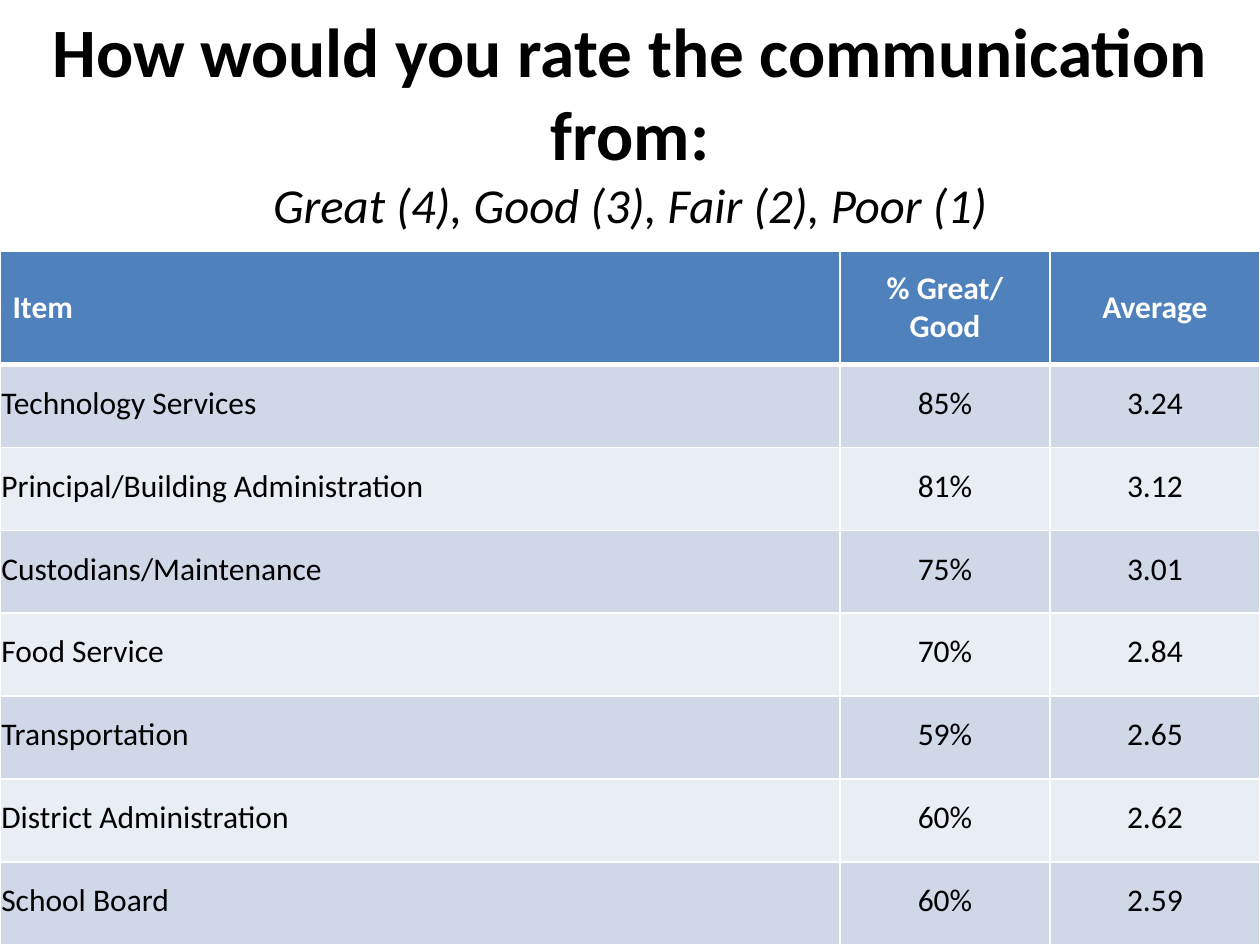
from lxml import etree
from pptx import Presentation
from pptx.dml.color import RGBColor
from pptx.enum import text
from pptx.oxml import ns
from pptx.util import Pt

QUESTION = "How would you rate the communication from:"
SCALE = "Great (4), Good (3), Fair (2), Poor (1)"
HEADER = ("Item", "% Great/ Good", "Average")
RATINGS = [
    ("Technology Services", "85%", "3.24"),
    ("Principal/Building Administration", "81%", "3.12"),
    ("Custodians/Maintenance", "75%", "3.01"),
    ("Food Service", "70%", "2.84"),
    ("Transportation", "59%", "2.65"),
    ("District Administration", "60%", "2.62"),
    ("School Board", "60%", "2.59"),
]

FONT = "Calibri"
BLACK = RGBColor(0x00, 0x00, 0x00)
WHITE = RGBColor(0xFF, 0xFF, 0xFF)
HEADER_BLUE = RGBColor(0x4F, 0x81, 0xBD)
BANDS = (RGBColor(0xD0, 0xD8, 0xE8), RGBColor(0xE9, 0xED, 0xF4))

SLIDE_W, SLIDE_H = 720, 540
TITLE_H = 138
TABLE_TOP = 143.5
HEADER_H = 64.8
COLUMN_SHARES = (4, 1, 1)
ROW_H = (SLIDE_H - TABLE_TOP - HEADER_H) / len(RATINGS)


def set_borders(cell, top, bottom):
    """Draw white cell borders; the side lines are 1 pt wide."""
    widths = {"lnL": 1, "lnR": 1, "lnT": top, "lnB": bottom}
    properties = cell._tc.get_or_add_tcPr()
    for position, (tag, width) in enumerate(widths.items()):
        line = etree.Element(ns.qn(f"a:{tag}"), w=str(Pt(width)))
        fill = etree.SubElement(line, ns.qn("a:solidFill"))
        etree.SubElement(fill, ns.qn("a:srgbClr"), val=str(WHITE))
        properties.insert(position, line)


def add_title(slide):
    title = slide.shapes.title
    title.left, title.top = Pt(0), Pt(0)
    title.width, title.height = Pt(SLIDE_W), Pt(TITLE_H)
    frame = title.text_frame
    frame.word_wrap = True
    frame.auto_size = text.MSO_AUTO_SIZE.NONE
    frame.vertical_anchor = text.MSO_ANCHOR.MIDDLE
    paragraph = frame.paragraphs[0]
    paragraph.alignment = text.PP_ALIGN.CENTER
    paragraph.font.name = FONT
    paragraph.font.color.rgb = BLACK

    question = paragraph.add_run()
    question.text = QUESTION
    question.font.size = Pt(39.6)
    question.font.bold = True
    paragraph.add_line_break()
    scale = paragraph.add_run()
    scale.text = SCALE
    scale.font.size = Pt(27.9)
    scale.font.italic = True


def add_ratings(slide):
    rows = [HEADER, *RATINGS]
    table = slide.shapes.add_table(
        len(rows), len(HEADER), Pt(0), Pt(TABLE_TOP),
        Pt(SLIDE_W), Pt(SLIDE_H - TABLE_TOP)).table
    for column, share in zip(table.columns, COLUMN_SHARES):
        column.width = Pt(SLIDE_W * share / sum(COLUMN_SHARES))

    for r, values in enumerate(rows):
        is_header = r == 0
        table.rows[r].height = Pt(HEADER_H if is_header else ROW_H)
        for c, value in enumerate(values):
            cell = table.cell(r, c)
            cell.text = value
            cell.vertical_anchor = text.MSO_ANCHOR.MIDDLE
            if not is_header:
                cell.margin_left = cell.margin_right = cell.margin_top = Pt(0.75)
                cell.margin_bottom = Pt(3.6)
            cell.fill.solid()
            cell.fill.fore_color.rgb = HEADER_BLUE if is_header else BANDS[(r - 1) % 2]
            set_borders(cell, top=3 if r == 1 else 1, bottom=3 if is_header else 1)
            paragraph = cell.text_frame.paragraphs[0]
            paragraph.alignment = text.PP_ALIGN.CENTER if c else text.PP_ALIGN.LEFT
            paragraph.font.name = FONT
            paragraph.font.size = Pt(18)
            paragraph.font.bold = is_header
            paragraph.font.color.rgb = WHITE if is_header else BLACK


def main():
    deck = Presentation()
    deck.slide_width, deck.slide_height = Pt(SLIDE_W), Pt(SLIDE_H)
    slide = deck.slides.add_slide(deck.slide_layouts[5])
    add_title(slide)
    add_ratings(slide)
    deck.save("out.pptx")


if __name__ == "__main__":
    main()
